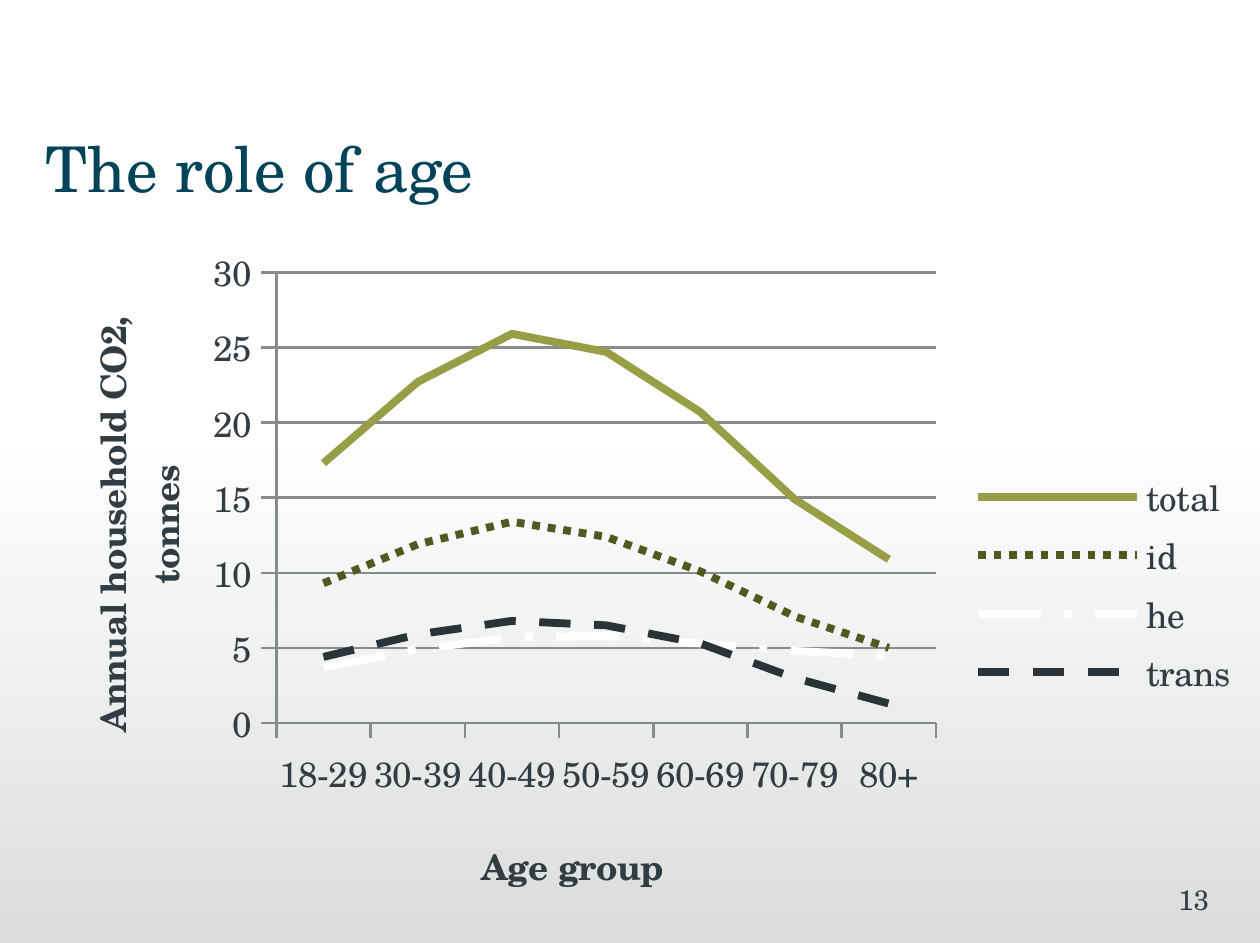
from lxml import etree
from pptx import Presentation
from pptx.chart.data import CategoryChartData
from pptx.dml.color import RGBColor
from pptx.enum import chart as charts, dml, shapes, text
from pptx.oxml import ns
from pptx.util import Cm, Pt

FONT = "TeX Gyre Schola"
COLORS = {
    "white": "FFFFFF", "mist": "DCDEDE", "title": "014359", "text": "323D43",
    "grid": "868B8D", "olive": "979E45", "moss": "4F5A20", "slate": "293338",
}
AGE_GROUPS = ["18-29", "30-39", "40-49", "50-59", "60-69", "70-79", "80+"]
DASH = dml.MSO_LINE
SERIES = [  # name, values, colour, dash
    ("total", [17.3, 22.7, 25.9, 24.7, 20.7, 14.9, 10.9], "olive", DASH.SOLID),
    ("id", [9.3, 11.9, 13.4, 12.4, 10.1, 7.1, 5], "moss", DASH.ROUND_DOT),
    ("he", [3.7, 4.9, 5.7, 5.8, 5.3, 4.8, 4.5], "white", DASH.LONG_DASH_DOT),
    ("trans", [4.4, 5.9, 6.8, 6.5, 5.3, 3, 1.3], "slate", DASH.DASH),
]


def color(name):
    return RGBColor.from_string(COLORS[name])


def style_font(font, size, color_name, bold=False):
    font.name, font.size, font.bold = FONT, Pt(size), bold
    font.color.rgb = color(color_name)


def style_line(line, color_name, width):
    line.color.rgb = color(color_name)
    line.width = Pt(width)


def set_layout(element, x, y, width=None, height=None, inner=False):
    """Place a chart part by fractions of the chart's box."""
    for old in element.findall(ns.qn("c:layout")):
        element.remove(old)
    layout = etree.Element(ns.qn("c:layout"))
    manual = etree.SubElement(layout, ns.qn("c:manualLayout"))
    settings = [("layoutTarget", "inner")] if inner else []
    settings += [("xMode", "edge"), ("yMode", "edge"), ("x", x), ("y", y)]
    if width:
        settings += [("w", width), ("h", height)]
    for tag, value in settings:
        etree.SubElement(manual, ns.qn(f"c:{tag}")).set("val", str(value))
    # The layout follows the title text or legend position, and leads the plot area
    leading = [child for child in element
               if child.tag in (ns.qn("c:tx"), ns.qn("c:legendPos"))]
    element.insert(len(leading), layout)


def add_backdrop(slide, left, top, width, height):
    shape = slide.shapes.add_shape(
        shapes.MSO_SHAPE.RECTANGLE, left, top, width, height)
    shape.shadow.inherit = False
    shape.line.fill.background()
    shape.fill.gradient()
    shape.fill.gradient_angle = 270
    for stop, name, position in zip(
            shape.fill.gradient_stops, ("white", "mist"), (0, 1)):
        stop.color.rgb = color(name)
        stop.position = position
    slide.shapes._spTree.insert(2, shape._element)  # behind the title


def fill_text(shape, wording, size, color_name, alignment, margins):
    frame = shape.text_frame
    frame.word_wrap = True
    frame.auto_size = text.MSO_AUTO_SIZE.NONE
    frame.vertical_anchor = text.MSO_ANCHOR.MIDDLE
    frame.margin_left, frame.margin_right = margins
    frame.margin_top = frame.margin_bottom = Cm(0.05)
    frame.text = wording
    paragraph = frame.paragraphs[0]
    paragraph.alignment = alignment
    style_font(paragraph.font, size, color_name)


def add_title(slide, left, top, width, height):
    title = slide.shapes.title
    title.left, title.top, title.width, title.height = left, top, width, height
    fill_text(title, "The role of age", 18, "title",
              text.PP_ALIGN.LEFT, (Cm(0), Cm(0.13)))


def add_page_number(slide, left, top, width, height):
    box = slide.shapes.add_textbox(left, top, width, height)
    fill_text(box, "13", 8, "text", text.PP_ALIGN.RIGHT, (Cm(0.13), Cm(0)))


def format_axis(axis, title, x, y):
    axis.major_tick_mark = charts.XL_TICK_MARK.OUTSIDE
    axis.minor_tick_mark = charts.XL_TICK_MARK.NONE
    style_line(axis.format.line, "grid", 0.75)
    style_font(axis.tick_labels.font, 10, "text")
    axis.axis_title.text_frame.text = title
    paragraph = axis.axis_title.text_frame.paragraphs[0]
    style_font(paragraph.font, 10, "text", bold=True)
    style_font(paragraph.runs[0].font, 10, "text", bold=True)
    set_layout(axis.axis_title._element, x, y)


def add_age_chart(slide, left, top, width, height):
    data = CategoryChartData()
    data.categories = AGE_GROUPS
    for name, values, _, _ in SERIES:
        data.add_series(name, values)
    chart = slide.shapes.add_chart(
        charts.XL_CHART_TYPE.LINE, left, top, width, height, data).chart
    chart.has_title = False
    style_font(chart.font, 10, "text")
    set_layout(chart._chartSpace.chart.plotArea, 0.21, 0.055, 0.53, 0.65, inner=True)

    # Axes
    format_axis(chart.category_axis, "Age group", 0.37, 0.86)
    values = chart.value_axis
    format_axis(values, "Annual household CO2, tonnes", 0.05, 0.11)
    values.minimum_scale, values.maximum_scale, values.major_unit = 0, 30, 5
    style_line(values.major_gridlines.format.line, "grid", 0.75)

    # Legend
    chart.has_legend = True
    chart.legend.position = charts.XL_LEGEND_POSITION.RIGHT
    chart.legend.include_in_layout = False
    style_font(chart.legend.font, 10, "text")
    set_layout(chart.legend._element, 0.76, 0.33, 0.23, 0.35)

    # Series lines
    chart.plots[0].vary_by_categories = False
    for series, (_, _, color_name, dash) in zip(chart.plots[0].series, SERIES):
        series.smooth = False
        series.marker.style = charts.XL_MARKER_STYLE.NONE
        style_line(series.format.line, color_name, 2.25)
        series.format.line.dash_style = dash


def main():
    presentation = Presentation()
    presentation.slide_width, presentation.slide_height = Cm(12.7), Cm(9.5)
    slide = presentation.slides.add_slide(presentation.slide_layouts[5])
    add_backdrop(slide, Cm(0), Cm(4.22), Cm(12.7), Cm(5.28))
    add_title(slide, Cm(0.46), Cm(1.24), Cm(11.81), Cm(0.89))
    add_page_number(slide, Cm(9.55), Cm(8.74), Cm(2.64), Cm(0.64))
    add_age_chart(slide, Cm(0.15), Cm(2.36), Cm(12.55), Cm(6.99))
    presentation.save("out.pptx")


if __name__ == "__main__":
    main()
